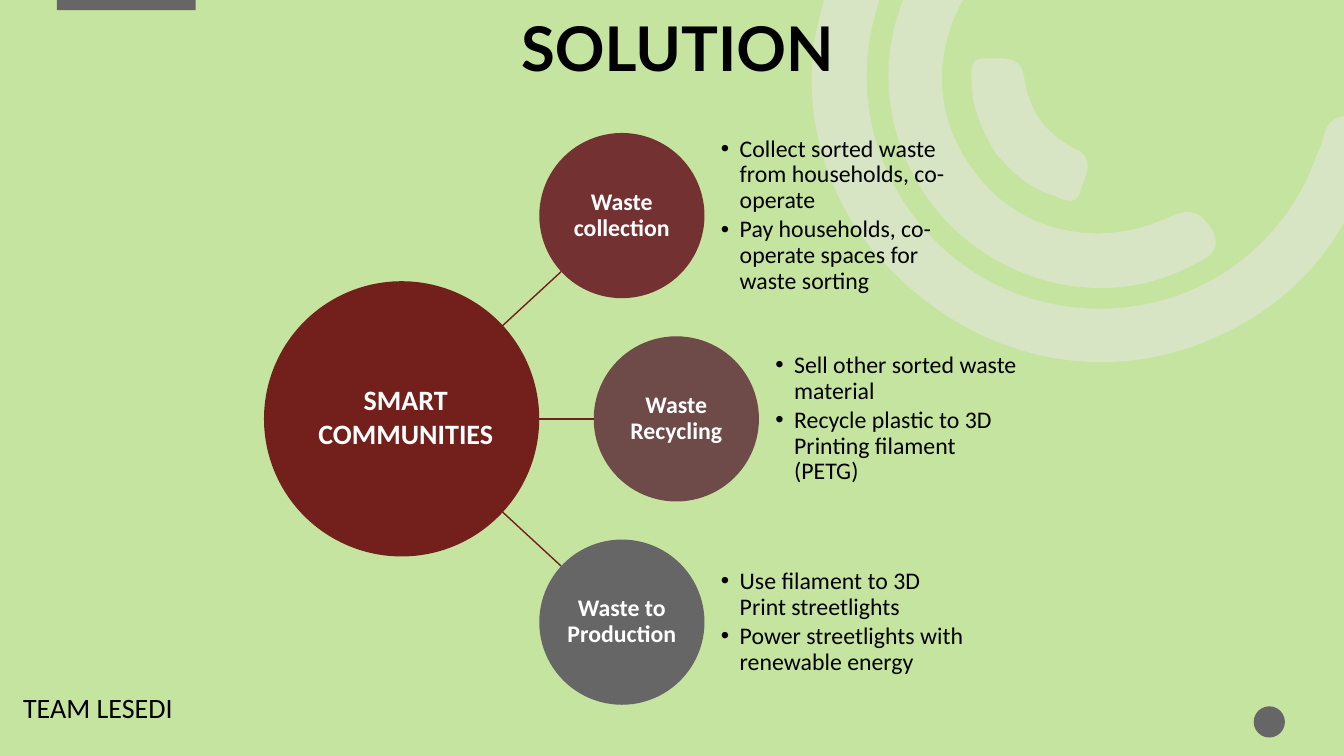
from lxml.etree import SubElement as Sub
from math import hypot
from pptx import Presentation
from pptx.dml.color import RGBColor
from pptx.enum.shapes import MSO_CONNECTOR as Conn, MSO_SHAPE as Kind
from pptx.enum.text import MSO_ANCHOR as Anchor, PP_ALIGN as Align
from pptx.oxml.ns import qn
from pptx.util import Pt

GREEN, GREY, PALE = "C5E4A0", "666666", "E7E6E6"
DARK, WHITE, BLACK = "731F1C", "FFFFFF", "000000"

ARCS = [
    [(8.51, 2.29), (7.99, 1.49, 7.87, 0.5, 8.38, -0.5), (8.9, -1.52, 9.76, -2.03, 10.9, -2.07),
     (11.05, -2.07, 11.21, -2.1, 11.31, -1.95), (11.44, -1.75, 11.27, -1.54, 10.98, -1.54),
     (9.67, -1.54, 8.65, -0.59, 8.6, 0.68), (8.56, 1.81, 9.36, 2.81, 10.46, 3.02),
     (11.6, 3.24, 12.7, 2.61, 13.07, 1.52), (13.09, 1.48, 13.11, 1.44, 13.12, 1.4),
     (13.16, 1.19, 13.27, 1.11, 13.49, 1.17), (13.73, 1.24, 13.67, 1.41, 13.61, 1.56),
     (13.34, 2.45, 12.78, 3.07, 11.91, 3.41), (10.7, 3.87, 9.36, 3.45, 8.51, 2.29)],
    [(9.22, 1.99), (8.62, 1.15, 8.69, 0.07, 9.4, -0.68), (9.51, -0.79, 9.62, -0.95, 9.8, -0.78),
     (9.95, -0.64, 9.97, -0.5, 9.79, -0.32), (9.25, 0.26, 9.2, 1.08, 9.65, 1.68),
     (10.08, 2.29, 10.88, 2.49, 11.61, 2.15), (11.82, 2.05, 11.93, 2.12, 12.03, 2.29),
     (12.13, 2.5, 11.97, 2.56, 11.83, 2.63), (10.96, 3.1, 9.83, 2.82, 9.22, 1.99)],
    [(9.87, 1.51), (9.75, 1.3, 9.64, 1.07, 9.64, 0.82), (9.64, 0.73, 9.61, 0.57, 9.76, 0.58),
     (9.92, 0.59, 10.13, 0.53, 10.16, 0.76), (10.21, 1.1, 10.36, 1.32, 10.67, 1.48),
     (10.88, 1.57, 10.76, 1.76, 10.72, 1.89), (10.68, 2.06, 10.55, 1.98, 10.45, 1.94),
     (10.21, 1.87, 10.03, 1.7, 9.87, 1.51)],
]

STEPS = [
    ("Waste collection", "733231", 0,
     ["Collect sorted waste from households, co-operate",
      "Pay households, co-operate spaces for waste sorting"]),
    ("Waste Recycling", "6E4A49", 38.9,
     ["Sell other sorted waste material",
      "Recycle plastic to 3D Printing filament (PETG)"]),
    ("Waste to Production", GREY, 0,
     ["Use filament to 3D Print streetlights",
      "Power streetlights with renewable energy"]),
]


def paint(fill, tone):
    """Fill with a solid hex colour."""
    fill.solid()
    fill.fore_color.rgb = RGBColor.from_string(tone)


def plain(shape, tone):
    """Give a shape a flat fill without line or shadow."""
    shape.shadow.inherit = False
    paint(shape.fill, tone)
    shape.line.fill.background()
    return shape


def block(slide, kind, box, tone):
    """Draw a flat preset shape in the box."""
    return plain(slide.shapes.add_shape(kind, *map(Pt, box)), tone)


def write(shape, lines, size, tone, bold=False, align=Align.LEFT, anchor=Anchor.MIDDLE,
          inset=None, lead=0.9, font="Calibri", dots=False):
    """Write one paragraph per line, with bullets on request."""
    frame = shape.text_frame
    frame.word_wrap = True
    frame.vertical_anchor = anchor
    if inset is not None:
        frame.margin_left = frame.margin_right = Pt(inset)
        frame.margin_top = frame.margin_bottom = Pt(inset)
    for i, line in enumerate(lines):
        para = frame.add_paragraph() if i else frame.paragraphs[0]
        para.alignment = align
        para.line_spacing = lead
        if i:
            para.space_before = Pt(2.5)
        if dots:
            props = para._p.get_or_add_pPr()
            props.set("marL", str(Pt(13.5)))
            props.set("indent", str(-Pt(13.5)))
            Sub(props, qn("a:buFont")).set("typeface", "Arial")
            Sub(props, qn("a:buChar")).set("char", "•")
        run = para.add_run()
        run.text = line
        run.font.size, run.font.bold, run.font.name = Pt(size), bold, font
        run.font.color.rgb = RGBColor.from_string(tone)


def curve(slide, arc):
    """Draw a closed outline of cubic curves given in inches."""
    flat = [Pt(72 * n) for part in arc for n in part]
    spots = list(zip(flat[::2], flat[1::2]))
    pen = slide.shapes.build_freeform(*spots[0])
    pen.add_line_segments(spots[1:], close=True)
    shape = pen.convert_to_shape()
    trace = shape._element.find(".//" + qn("a:path"))
    legs = trace.findall(qn("a:lnTo"))
    for first in range(0, len(legs), 3):
        bend = Sub(trace, qn("a:cubicBezTo"))
        legs[first].addprevious(bend)
        for leg in legs[first:first + 3]:
            bend.append(leg[0])
            trace.remove(leg)
    return shape


def decor(slide, wide, high):
    """Draw the pale arcs, the top tab and the corner dot."""
    for arc in ARCS:
        shape = plain(curve(slide, arc), PALE)
        tint = shape.fill._xPr.find(qn("a:solidFill"))[0]
        Sub(tint, qn("a:alpha")).set("val", "53000")
    block(slide, Kind.RECTANGLE, (40.6, -1.4, 99.2, 8.6), GREY)
    block(slide, Kind.OVAL, (wide - 64.5, high - 35.5, 22.3, 22.3), GREY)


def spoke(slide, hub, node, start, small):
    """Run a line from a given distance right of the hub to the rim of a node."""
    dx, dy = node[0] - hub[0], node[1] - hub[1]
    near, far = start / dx, 1 - small / hypot(dx, dy)
    ends = [hub[0] + dx * near, hub[1] + dy * near, hub[0] + dx * far, hub[1] + dy * far]
    line = slide.shapes.add_connector(Conn.STRAIGHT, *map(Pt, ends))
    line.line.color.rgb = RGBColor.from_string(DARK)
    line.line.width = Pt(1)
    Sub(line._element.spPr, qn("a:effectLst"))


def wheel(slide, left, top):
    """Draw the hub with its spokes, nodes and notes from the top left."""
    big, small, pitch, pad = 196.6, 118, 145.2, 17.3
    hub = (left + big / 2, top + pitch + small / 2)
    spots = [(left + big + step[2], top + i * pitch) for i, step in enumerate(STEPS)]
    for x, y in spots:
        spoke(slide, hub, (x + small / 2, y + small / 2), 68.8, small / 2)
    block(slide, Kind.OVAL, (left, hub[1] - big / 2, big, big), DARK)
    for (x, y), (name, tone, _, notes) in zip(spots, STEPS):
        block(slide, Kind.OVAL, (x, y, small, small), tone)
        side = small - 2 * pad
        label = slide.shapes.add_textbox(*map(Pt, (x + pad, y + pad, side, side)))
        write(label, [name], 17, WHITE, True, Align.CENTER, inset=0.7)
        note = slide.shapes.add_textbox(*map(Pt, (x + 129.7, y, 177.1, small)))
        write(note, notes, 17, BLACK, inset=0, dots=True)
    core = block(slide, Kind.RECTANGLE, (left + 26, hub[1] - 29.4, 150.5, 55.4), DARK)
    write(core, ["SMART COMMUNITIES"], 20, WHITE, True, Align.CENTER, lead=1)


def main():
    """Build the slide and save it."""
    deck = Presentation()
    wide, high = 960, 540
    deck.slide_width, deck.slide_height = Pt(wide), Pt(high)
    slide = deck.slides.add_slide(deck.slide_layouts[6])
    paint(slide.background.fill, GREEN)
    decor(slide, wide, high)
    title = slide.shapes.add_textbox(*map(Pt, (365.2, -15.5, 828, 104.4)))
    write(title, ["SOLUTION"], 44, BLACK, True, font="Lato")
    wheel(slide, 188.6, 95)
    team = block(slide, Kind.RECTANGLE, (9.4, 492.5, 279.4, 39.6), GREEN)
    write(team, ["TEAM LESEDI"], 20, BLACK, anchor=Anchor.TOP)
    deck.save("out.pptx")


if __name__ == "__main__":
    main()
